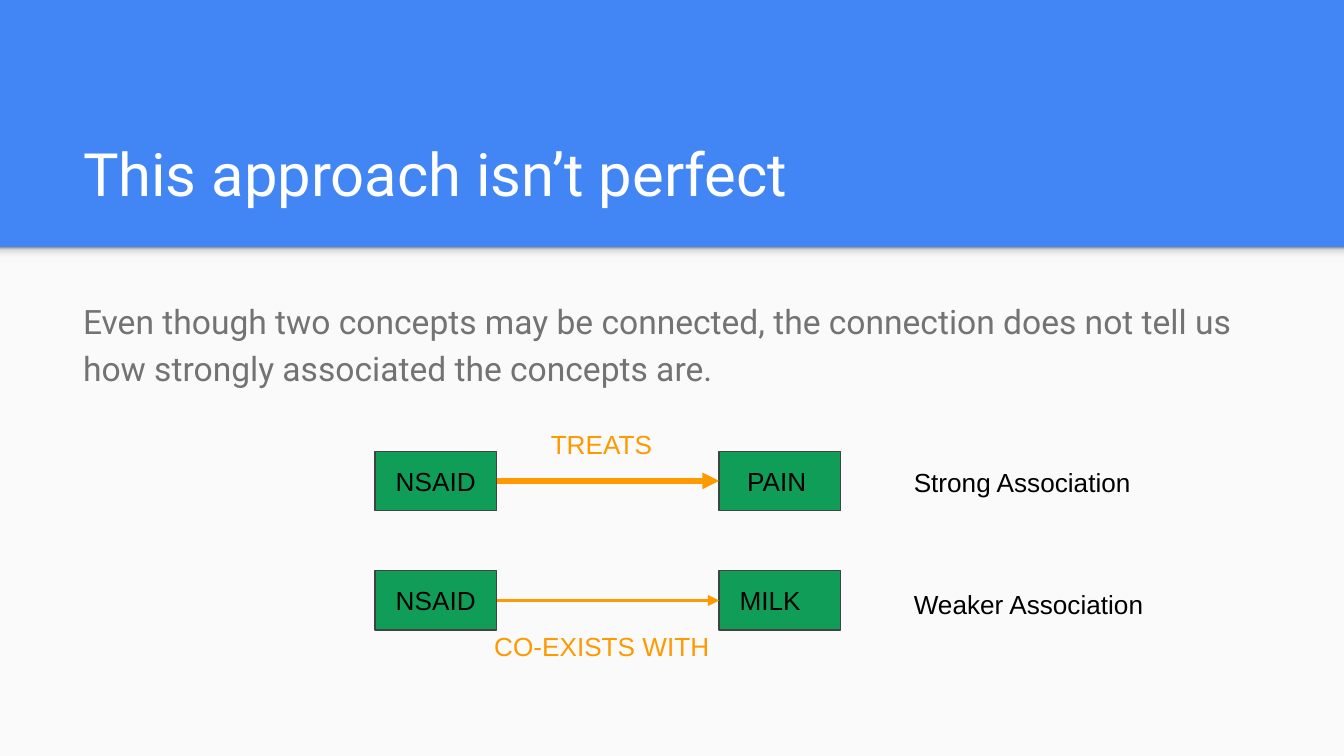
from dataclasses import dataclass

from lxml.etree import SubElement
from pptx import Presentation
from pptx.dml.color import RGBColor
from pptx.enum.shapes import MSO_CONNECTOR, MSO_SHAPE
from pptx.enum.text import MSO_ANCHOR, PP_ALIGN
from pptx.oxml.ns import qn
from pptx.util import Cm, Pt


@dataclass(frozen=True)
class Theme:
    background: str = "4285F4"
    panel: str = "FAFAFA"
    title: str = "FFFFFF"
    body: str = "737373"
    label: str = "000000"
    concept: str = "0F9D58"
    outline: str = "424242"
    relation: str = "FF9900"
    shadow_stops: tuple = ((0, "F9F9F9"), (36, "F9F9F9"), (80, "DEDEDE"), (100, "999999"))
    heading_font: str = "Roboto"
    label_font: str = "Arial"
    title_size: int = 32
    body_size: int = 18
    label_size: int = 14


THEME = Theme()
SLIDE_WIDTH, SLIDE_HEIGHT = 25.4, 14.29
PANEL_TOP = 4.67
INSET = 0.25
SPACE = 0.14
BOX_WIDTH, BOX_HEIGHT = 2.3, 1.12
SOURCE_LEFT, TARGET_LEFT = 7.09, 13.59
NOTE_LEFT = 17.02


def color(value):
    return RGBColor.from_string(value)


def write(shape, text, size, font, ink, anchor=MSO_ANCHOR.TOP, indent=0):
    frame = shape.text_frame
    frame.word_wrap = True
    frame.vertical_anchor = anchor
    frame.margin_left = Cm(INSET + indent)
    frame.margin_right = frame.margin_top = frame.margin_bottom = Cm(INSET)
    paragraph = frame.paragraphs[0]
    paragraph.text = text
    paragraph.alignment = PP_ALIGN.LEFT
    paragraph.font.size = Pt(size)
    paragraph.font.name = font
    paragraph.font.color.rgb = color(ink)
    return paragraph


def add_text(slide, left, top, width, height, text, size=THEME.label_size,
             font=THEME.label_font, ink=THEME.label, anchor=MSO_ANCHOR.TOP):
    box = slide.shapes.add_textbox(Cm(left), Cm(top), Cm(width), Cm(height))
    return write(box, text, size, font, ink, anchor)


def add_rectangle(slide, left, top, width, height, fill):
    shape = slide.shapes.add_shape(
        MSO_SHAPE.RECTANGLE, Cm(left), Cm(top), Cm(width), Cm(height))
    shape.shadow.inherit = False
    shape.fill.solid()
    shape.fill.fore_color.rgb = color(fill)
    shape.line.fill.background()
    return shape


def add_panel_shadow(slide):
    """Add the strip that fades downwards from the panel's top edge."""
    strip = add_rectangle(slide, 0, PANEL_TOP, SLIDE_WIDTH, 0.3, THEME.panel)
    strip.fill.gradient()
    strip.fill.gradient_angle = 90
    stops = strip.element.spPr.find(".//" + qn("a:gsLst"))
    stops.clear()
    for position, value in THEME.shadow_stops:
        stop = SubElement(stops, qn("a:gs"), pos=str(position * 1000))
        SubElement(stop, qn("a:srgbClr"), val=value)


def add_concept(slide, left, top, text, indent):
    box = add_rectangle(slide, left, top, BOX_WIDTH, BOX_HEIGHT, THEME.concept)
    box.line.color.rgb = color(THEME.outline)
    box.line.width = Pt(0.75)
    write(box, text, THEME.label_size, THEME.label_font, THEME.label,
          MSO_ANCHOR.MIDDLE, indent)


def add_arrow(slide, left, right, y, weight):
    arrow = slide.shapes.add_connector(
        MSO_CONNECTOR.STRAIGHT, Cm(left), Cm(y), Cm(right), Cm(y))
    arrow.line.color.rgb = color(THEME.relation)
    arrow.line.width = Pt(weight)
    SubElement(arrow.line._get_or_add_ln(), qn("a:tailEnd"), type="triangle")
    SubElement(arrow._element.spPr, qn("a:effectLst"))


def add_association(slide, top, target, target_indent, weight, note, note_top):
    """Add one row: source concept, arrow, target concept and a note."""
    add_concept(slide, SOURCE_LEFT, top, "NSAID", SPACE)
    add_concept(slide, TARGET_LEFT, top, target, target_indent)
    add_arrow(slide, SOURCE_LEFT + BOX_WIDTH, TARGET_LEFT, top + BOX_HEIGHT / 2, weight)
    add_text(slide, NOTE_LEFT, note_top, 5.05, 0.94, note)


def main():
    presentation = Presentation()
    presentation.slide_width = Cm(SLIDE_WIDTH)
    presentation.slide_height = Cm(SLIDE_HEIGHT)
    slide = presentation.slides.add_slide(presentation.slide_layouts[6])
    slide.background.fill.solid()
    slide.background.fill.fore_color.rgb = color(THEME.background)

    add_rectangle(slide, 0, PANEL_TOP, SLIDE_WIDTH, SLIDE_HEIGHT - PANEL_TOP, THEME.panel)
    add_panel_shadow(slide)
    add_text(slide, 1.32, 2.06, 22.83, 2.13, "This approach isn’t perfect",
             THEME.title_size, THEME.heading_font, THEME.title, MSO_ANCHOR.BOTTOM)
    body = add_text(
        slide, 1.32, 5.33, 22.83, 7.52,
        "Even though two concepts may be connected, the connection does not tell us "
        "how strongly associated the concepts are.",
        THEME.body_size, THEME.heading_font, THEME.body)
    body.line_spacing = 1.15
    body.space_after = Pt(16)

    add_association(slide, 8.53, "PAIN", 2 * SPACE, 3, "Strong Association", 8.56)
    add_association(slide, 10.79, "MILK", SPACE, 1.5, "Weaker Association", 10.87)
    add_text(slide, 9.09, 11.66, 5.26, 0.58, "CO-EXISTS WITH", ink=THEME.relation)
    add_text(slide, 10.16, 7.85, 2.72, 0.58, "TREATS", ink=THEME.relation)

    presentation.save("out.pptx")


if __name__ == "__main__":
    main()
